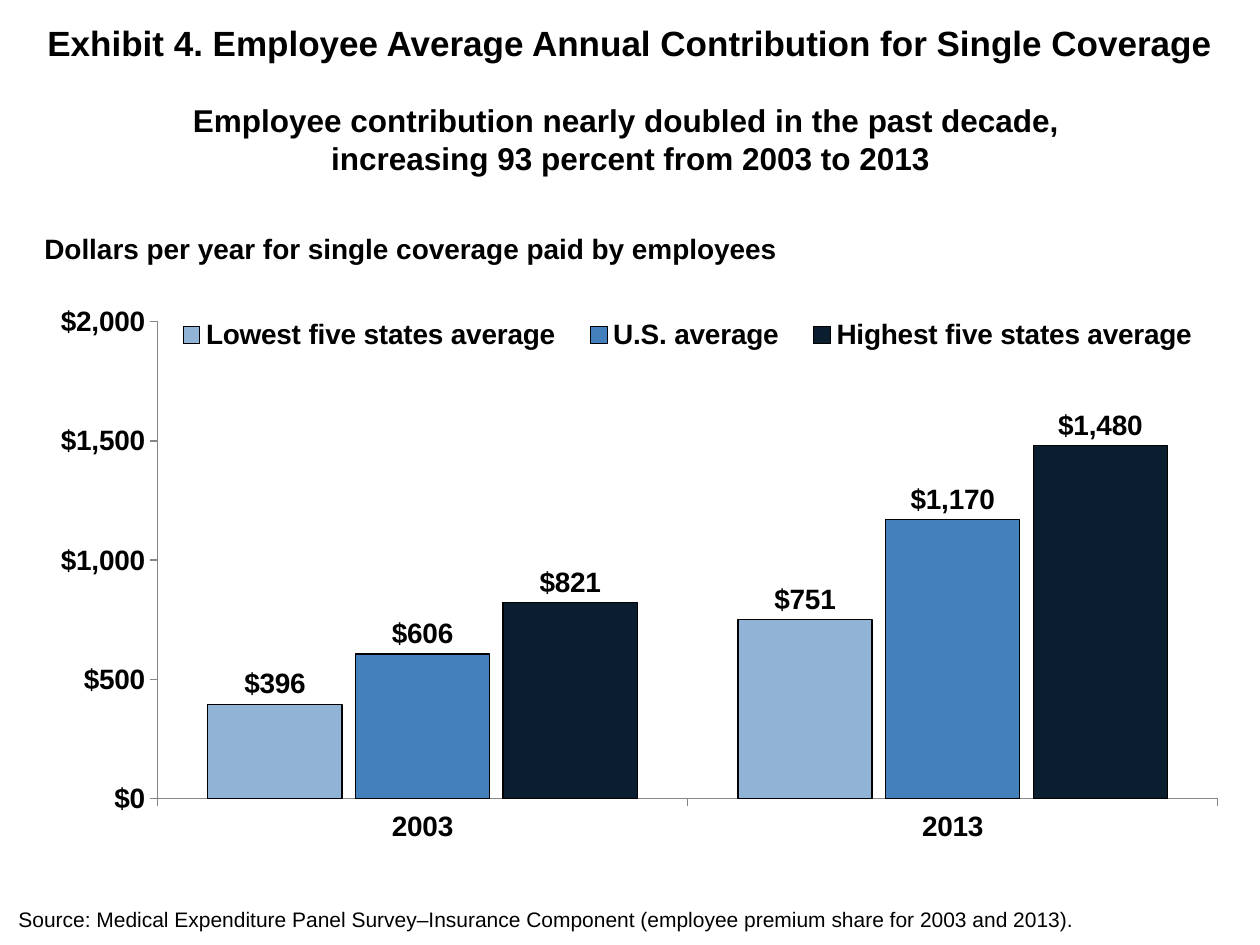
import pptx
import pptx.chart.data
import pptx.dml.color
import pptx.enum.chart
import pptx.enum.text
import pptx.oxml
import pptx.oxml.ns
import pptx.util

PX = 914400 // 126
FONT = "Arial"
DOLLARS = r"\$#,##0"

BLACK = pptx.dml.color.RGBColor(0x00, 0x00, 0x00)
AXIS_GRAY = pptx.dml.color.RGBColor(0x86, 0x86, 0x86)
LIGHT_BLUE = pptx.dml.color.RGBColor(0x90, 0xB3, 0xD6)
MID_BLUE = pptx.dml.color.RGBColor(0x44, 0x80, 0xBB)
NAVY = pptx.dml.color.RGBColor(0x0A, 0x1E, 0x30)

YEARS = ["2003", "2013"]
CONTRIBUTIONS = [
    ("Lowest five states average", [396, 751], LIGHT_BLUE),
    ("U.S. average", [606, 1170], MID_BLUE),
    ("Highest five states average", [821, 1480], NAVY),
]


def px(*lengths):
    return [length * PX for length in lengths]


def style_font(font, size, bold=True):
    font.name = FONT
    font.size = pptx.util.Pt(size)
    font.bold = bold
    font.color.rgb = BLACK


def add_text(slide, box, lines, size, bold=True, centered=False, wrap=True, top_inset=6):
    frame = slide.shapes.add_textbox(*px(*box)).text_frame
    frame.word_wrap = wrap
    frame.margin_top = top_inset * PX
    for index, line in enumerate(lines):
        paragraph = frame.paragraphs[0] if index == 0 else frame.add_paragraph()
        if centered:
            paragraph.alignment = pptx.enum.text.PP_ALIGN.CENTER
        run = paragraph.add_run()
        run.text = line
        style_font(run.font, size, bold)


def set_layout(parent, position, x, y, w, h, target=""):
    for previous in parent.findall(pptx.oxml.ns.qn("c:layout")):
        parent.remove(previous)
    layout = pptx.oxml.parse_xml(
        f'<c:layout {pptx.oxml.ns.nsdecls("c")}><c:manualLayout>{target}'
        '<c:xMode val="edge"/><c:yMode val="edge"/>'
        f'<c:x val="{x}"/><c:y val="{y}"/><c:w val="{w}"/><c:h val="{h}"/>'
        "</c:manualLayout></c:layout>"
    )
    parent.insert(position, layout)


def style_axis(axis):
    axis.has_major_gridlines = False
    axis.major_tick_mark = pptx.enum.chart.XL_TICK_MARK.OUTSIDE
    axis.minor_tick_mark = pptx.enum.chart.XL_TICK_MARK.NONE
    axis.format.line.color.rgb = AXIS_GRAY
    axis.format.line.width = pptx.util.Pt(0.75)
    style_font(axis.tick_labels.font, 16)


def style_series(series, color):
    series.format.fill.solid()
    series.format.fill.fore_color.rgb = color
    series.format.line.color.rgb = BLACK
    series.format.line.width = pptx.util.Pt(0.75)
    series.invert_if_negative = False
    labels = series.data_labels
    labels.show_value = True
    labels.position = pptx.enum.chart.XL_LABEL_POSITION.OUTSIDE_END
    labels.number_format = DOLLARS
    labels.number_format_is_linked = False
    style_font(labels.font, 16)


def add_legend(chart):
    chart.has_legend = True
    legend = chart.legend
    legend.position = pptx.enum.chart.XL_LEGEND_POSITION.TOP
    legend.include_in_layout = False
    style_font(legend.font, 16)
    set_layout(legend._element, 1, 0.1, 0.18, 0.88, 0.06)


def add_contribution_chart(slide, box):
    data = pptx.chart.data.CategoryChartData(number_format=DOLLARS)
    data.categories = YEARS
    for name, values, _ in CONTRIBUTIONS:
        data.add_series(name, values)
    chart = slide.shapes.add_chart(
        pptx.enum.chart.XL_CHART_TYPE.COLUMN_CLUSTERED, *px(*box), data
    ).chart
    chart.has_title = False
    style_font(chart.font, 16)

    columns = chart.plots[0]
    columns.vary_by_categories = False
    columns.gap_width = 75
    columns.overlap = -10
    for series, (_, _, color) in zip(columns.series, CONTRIBUTIONS):
        style_series(series, color)

    style_axis(chart.category_axis)
    dollar_axis = chart.value_axis
    style_axis(dollar_axis)
    dollar_axis.minimum_scale = 0
    dollar_axis.maximum_scale = 2000
    dollar_axis.major_unit = 500
    dollar_axis.tick_labels.number_format = DOLLARS
    dollar_axis.tick_labels.number_format_is_linked = False

    add_legend(chart)
    plot_area = chart._chartSpace.find(".//" + pptx.oxml.ns.qn("c:plotArea"))
    set_layout(plot_area, 0, 0.1, 0.19, 0.88, 0.71, '<c:layoutTarget val="inner"/>')


def main():
    deck = pptx.Presentation()
    deck.slide_width, deck.slide_height = px(1260, 945)
    slide = deck.slides.add_slide(deck.slide_layouts[6])

    add_text(
        slide, (6, 901, 1232, 38),
        ["Source: Medical Expenditure Panel Survey–Insurance Component "
         "(employee premium share for 2003 and 2013)."],
        12, bold=False,
    )
    add_contribution_chart(slide, (37, 194, 1205, 672))
    add_text(
        slide, (0, 13, 1260, 63),
        ["Exhibit 4. Employee Average Annual Contribution for Single Coverage"],
        20, centered=True, top_inset=9,
    )
    add_text(
        slide, (180, 95, 901, 89),
        ["Employee contribution nearly doubled in the past decade, ",
         "increasing 93 percent from 2003 to 2013"],
        18, centered=True, wrap=False,
    )
    add_text(
        slide, (32, 226, 798, 47),
        ["Dollars per year for single coverage paid by employees"], 16,
    )
    deck.save("out.pptx")


if __name__ == "__main__":
    main()
